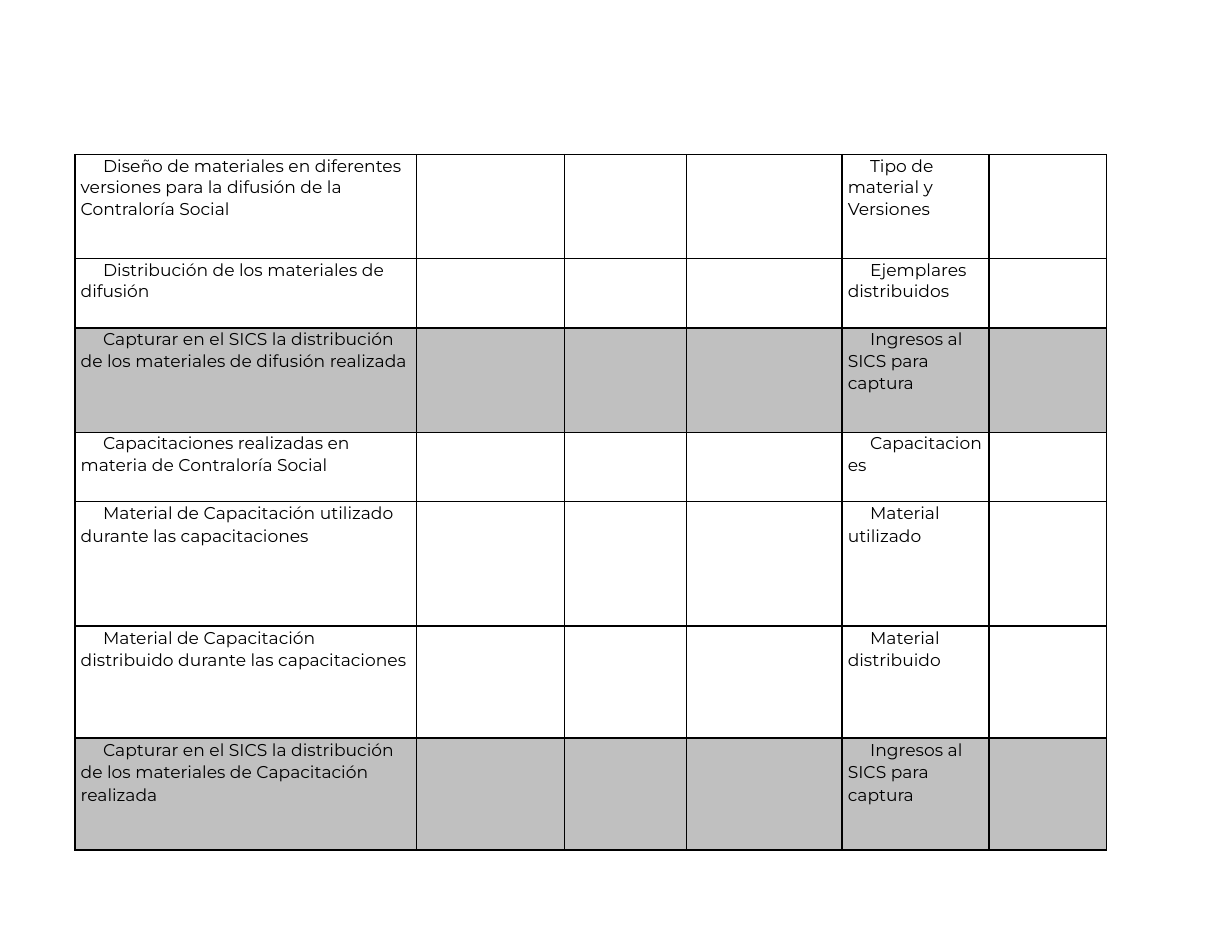
from lxml.etree import SubElement
from pptx import Presentation
from pptx.dml.color import RGBColor
from pptx.oxml.ns import qn
from pptx.util import Inches, Pt

COLS = [3.05, 1.32, 1.09, 1.39, 1.31, 1.05]
ROWS = [
    (0.93, 14, None, "Diseño de materiales en diferentes versiones para la difusión de la Contraloría Social",
     "Tipo de material y Versiones"),
    (0.62, 14, None, "Distribución de los materiales de difusión", "Ejemplares distribuidos"),
    (0.93, 14, "C0C0C0", "Capturar en el SICS la distribución de los materiales de difusión realizada",
     "Ingresos al SICS para captura"),
    (0.62, 14, None, "Capacitaciones realizadas en materia de Contraloría Social", "Capacitaciones"),
    (1.11, 14.5, None, "Material de Capacitación utilizado durante las capacitaciones", "Material utilizado"),
    (1, 14.5, None, "Material de Capacitación distribuido durante las capacitaciones", "Material distribuido"),
    (1, 14.5, "C0C0C0", "Capturar en el SICS la distribución de los materiales de Capacitación realizada",
     "Ingresos al SICS para captura"),
]
TASK, UNIT = 0, 4


def color(code):
    return RGBColor.from_string(code)


def frame(cell):
    props = cell._tc.get_or_add_tcPr()
    for side in ("lnL", "lnR", "lnT", "lnB"):
        line = SubElement(props, qn(f"a:{side}"), w=str(Pt(1)))
        fill = SubElement(line, qn("a:solidFill"))
        SubElement(fill, qn("a:srgbClr"), val="000000")


def paint(cell, shade):
    if shade:
        cell.fill.solid()
        cell.fill.fore_color.rgb = color(shade)
    else:
        cell.fill.background()


def write(cell, text, pitch):
    cell.margin_left = cell.margin_right = Inches(0.05)
    cell.margin_top = cell.margin_bottom = 0
    para = cell.text_frame.paragraphs[0]
    props = para._p.get_or_add_pPr()
    props.set("marL", "0")
    props.set("indent", str(Inches(0.2)))
    para.line_spacing = Pt(pitch)
    para.space_after = Pt(5)
    run = para.add_run()
    run.text = text
    run.font.name = "Montserrat"
    run.font.size = Pt(11)
    run.font.color.rgb = color("000000")


def main():
    deck = Presentation()
    deck.slide_width, deck.slide_height = Inches(11), Inches(8.5)
    slide = deck.slides.add_slide(deck.slide_layouts[6])
    high = sum(row[0] for row in ROWS)
    table = slide.shapes.add_table(
        len(ROWS), len(COLS), Inches(0.67), Inches(1.38), Inches(sum(COLS)), Inches(high)
    ).table
    table.first_row = table.horz_banding = False
    for col, width in zip(table.columns, COLS):
        col.width = Inches(width)
    for row, (height, pitch, shade, task, unit) in zip(table.rows, ROWS):
        row.height = Inches(height)
        for cell in row.cells:
            frame(cell)
            paint(cell, shade)
        write(row.cells[TASK], task, pitch)
        write(row.cells[UNIT], unit, pitch)
    deck.save("out.pptx")


if __name__ == "__main__":
    main()
